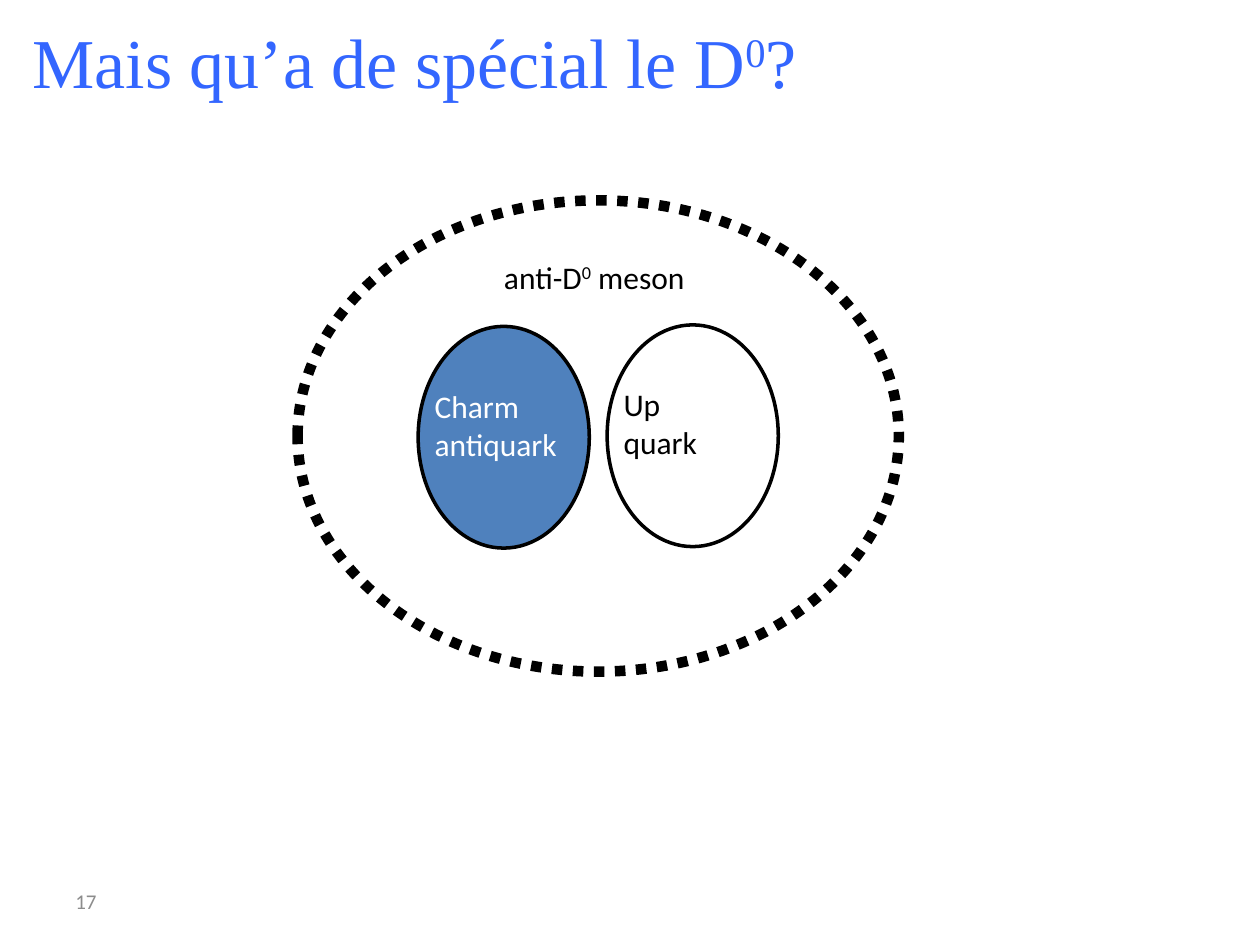
from pptx import Presentation
from pptx import util as u
from pptx.dml.color import RGBColor
from pptx.enum import dml, shapes, text

THEME = {
    "blue": RGBColor.from_string("3366FF"),
    "charm": RGBColor.from_string("4F81BD"),
    "black": RGBColor.from_string("000000"),
    "white": RGBColor.from_string("FFFFFF"),
    "grey": RGBColor.from_string("8C8C8C"),
    "title": {"name": "Times New Roman", "size": u.Pt(40)},
    "label": {"name": "Calibri", "size": u.Pt(18)},
    "number": {"name": "Calibri", "size": u.Pt(12)},
}


def write(shape, paragraphs, style, color, inset=0, anchor=text.MSO_ANCHOR.TOP, wrap=True):
    """Fill a shape with paragraphs, each a list of (text, baseline percent) runs."""
    frame = shape.text_frame
    frame_format = {"margin_left": inset, "margin_right": inset, "margin_top": 0,
                    "margin_bottom": 0, "vertical_anchor": anchor, "word_wrap": wrap,
                    "auto_size": text.MSO_AUTO_SIZE.NONE}
    for name, value in frame_format.items():
        setattr(frame, name, value)
    for index, runs in enumerate(paragraphs):
        paragraph = frame.add_paragraph() if index else frame.paragraphs[0]
        paragraph.alignment = text.PP_ALIGN.LEFT
        for words, baseline in runs:
            run = paragraph.add_run()
            run.text = words
            for name, value in THEME[style].items():
                setattr(run.font, name, value)
            run.font.color.rgb = THEME[color]
            if baseline:
                run.font._element.set("baseline", str(baseline * 1000))


def add_form(kind, left, top, width, height, fill=None, line_width=None):
    shape = slide.shapes.add_shape(kind, u.Cm(left), u.Cm(top), u.Cm(width), u.Cm(height))
    shape.shadow.inherit = False
    if fill:
        shape.fill.solid()
        shape.fill.fore_color.rgb = THEME[fill]
    else:
        shape.fill.background()
    if line_width:
        shape.line.color.rgb = THEME["black"]
        shape.line.width = u.Pt(line_width)
    else:
        shape.line.fill.background()
    return shape


presentation = Presentation()
presentation.slide_width, presentation.slide_height = u.Cm(25.4), u.Cm(19.05)
slide = presentation.slides.add_slide(presentation.slide_layouts[5])

number = slide.shapes.add_textbox(u.Cm(1.27), u.Cm(17.65), u.Cm(5.92), u.Cm(1.02))
write(number, [[("17", 0)]], "number", "grey", u.Cm(0.25), text.MSO_ANCHOR.MIDDLE)

# Meson: dotted outline and its name
OVAL, RECTANGLE = shapes.MSO_SHAPE.OVAL, shapes.MSO_SHAPE.RECTANGLE
meson = add_form(OVAL, 6, 4.04, 12.12, 9.5, line_width=6)
meson.line.dash_style = dml.MSO_LINE.ROUND_DOT
meson_name = slide.shapes.add_textbox(u.Cm(10.16), u.Cm(5.21), u.Cm(3.71), u.Cm(0.76))
write(meson_name, [[("anti-D", 0), ("0", 32), (" meson", 0)]], "label", "black", wrap=False)

# Quarks: an ellipse with a label set inside it
quarks = [
    (8.43, 6.58, "charm", "white", ["Charm antiquark"]),
    (12.24, 6.55, "white", "black", ["Up", "quark"]),
]
for left, top, fill, color, lines in quarks:
    add_form(OVAL, left, top, 3.45, 4.47, fill, line_width=2)
    label = add_form(RECTANGLE, left + 0.33, top + 1.22, 2.77, 1.75, fill)
    write(label, [[(line, 0)] for line in lines], "label", color)

title = slide.shapes.title
title_place = {"left": 0.66, "top": 0.38, "width": 25.35, "height": 2.64}
for name, value in title_place.items():
    setattr(title, name, u.Cm(value))
write(title, [[("Mais qu’a de spécial le D", 0), ("0", 30), ("?", 0)]], "title", "blue")

presentation.save("out.pptx")
